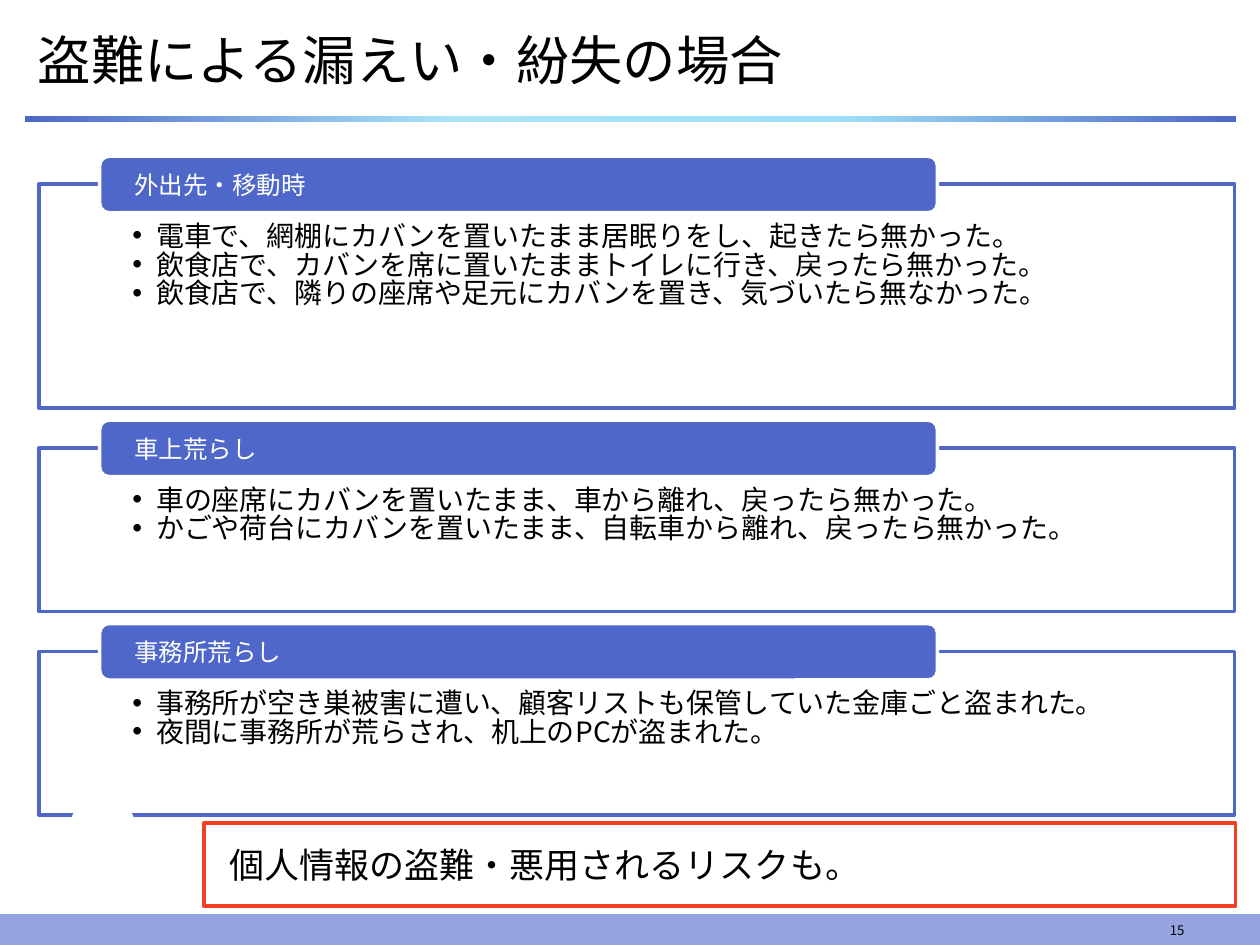
from dataclasses import dataclass

from lxml import etree
from pptx import Presentation
from pptx import util as u
from pptx.dml.color import RGBColor
from pptx.enum import shapes, text
from pptx.oxml import ns


@dataclass(frozen=True)
class Theme:
    font: str = "Noto Sans CJK JP"
    ink: str = "000000"
    paper: str = "FFFFFF"
    blue: str = "4E67C8"
    footer: str = "95A4DE"
    red: str = "F14124"
    bar_stops: tuple = ((0, "4E67C8"), (35, "A9E3F8"), (67, "9EE0F7"), (100, "4E67C8"))
    title_size: float = 30.5
    warning_size: float = 20
    list_size: float = 16
    tag_size: float = 14
    number_size: float = 7.5


def add_xml(parent, tag, **attributes):
    return etree.SubElement(parent, ns.qn(tag), attributes)


class SlideBuilder:
    def __init__(self, deck, theme):
        self.theme = theme
        self.slide = deck.slides.add_slide(deck.slide_layouts[5])

    def shape(self, kind, place, fill, line=None, width=2):
        """Add a preset shape; place is left, top, width, height in cm."""
        shape = self.slide.shapes.add_shape(kind, *map(u.Cm, place))
        shape.shadow.inherit = False
        shape.fill.solid()
        shape.fill.fore_color.rgb = RGBColor.from_string(fill)
        if line:
            shape.line.color.rgb = RGBColor.from_string(line)
            shape.line.width = u.Pt(width)
        else:
            shape.line.fill.background()
        return shape

    def rectangle(self, place, fill, line=None, width=2):
        return self.shape(shapes.MSO_SHAPE.RECTANGLE, place, fill, line, width)

    def gradient_bar(self, place):
        bar = self.rectangle(place, self.theme.blue)
        bar.fill.gradient()
        bar.fill.gradient_angle = 0
        stops = bar.element.spPr.find(ns.qn("a:gradFill")).find(ns.qn("a:gsLst"))
        for stop in list(stops):
            stops.remove(stop)
        for position, color in self.theme.bar_stops:
            stop = add_xml(stops, "a:gs", pos=str(position * 1000))
            add_xml(stop, "a:srgbClr", val=color)

    def add_text(self, box, lines, size, color, insets=(0.25, 0.13),
                 anchor=text.MSO_ANCHOR.MIDDLE, align=text.PP_ALIGN.LEFT):
        """Fill a box with one paragraph per line; insets are side and top/bottom in cm."""
        frame = box.text_frame
        frame.word_wrap = True
        frame.auto_size = text.MSO_AUTO_SIZE.NONE
        frame.vertical_anchor = anchor
        frame.margin_left = frame.margin_right = u.Cm(insets[0])
        frame.margin_top = frame.margin_bottom = u.Cm(insets[1])
        for index, line in enumerate(lines):
            para = frame.add_paragraph() if index else frame.paragraphs[0]
            para.alignment = align
            span = para.add_run()
            span.text = line
            span.font.name = self.theme.font
            span.font.size = u.Pt(size)
            span.font.color.rgb = RGBColor.from_string(color)
            add_xml(span._r.get_or_add_rPr(), "a:ea", typeface=self.theme.font)
        return frame.paragraphs

    def title(self, place, line):
        box = self.slide.shapes.title
        box.left, box.top, box.width, box.height = map(u.Cm, place)
        self.add_text(box, [line], self.theme.title_size, self.theme.ink)

    def number(self, place, line):
        box = self.slide.shapes.add_textbox(*map(u.Cm, place))
        self.add_text(box, [line], self.theme.number_size, self.theme.ink,
                      anchor=text.MSO_ANCHOR.BOTTOM, align=text.PP_ALIGN.RIGHT)

    def panel(self, top, height, heading, items):
        """Add a framed bullet list with its heading tag across the top edge."""
        theme = self.theme
        frame = self.rectangle((0.79, top, 24.1, height), theme.paper, theme.blue)
        paras = self.add_text(frame, items, theme.list_size, theme.ink,
                              insets=(1.88, 0.8), anchor=text.MSO_ANCHOR.TOP)
        for para in paras:
            para.line_spacing = 0.85
            settings = para._p.get_or_add_pPr()
            settings.set("marL", str(u.Cm(0.48)))
            settings.set("indent", str(u.Cm(-0.48)))
            add_xml(settings, "a:buFont", typeface="Arial")
            add_xml(settings, "a:buChar", char="•")
        tag = self.shape(shapes.MSO_SHAPE.ROUNDED_RECTANGLE, (2.01, top - 0.56, 16.89, 1.14),
                         theme.blue, theme.paper)
        self.add_text(tag, [heading], theme.tag_size, theme.paper, insets=(0.64, 0))

    def warning(self, place, line):
        box = self.rectangle(place, self.theme.paper, self.theme.red)
        self.add_text(box, [line], self.theme.warning_size, self.theme.ink, insets=(0.51, 0.13))


PANELS = [
    (4.52, "外出先・移動時", [
        "電車で、網棚にカバンを置いたまま居眠りをし、起きたら無かった。",
        "飲食店で、カバンを席に置いたままトイレに行き、戻ったら無かった。",
        "飲食店で、隣りの座席や足元にカバンを置き、気づいたら無なかった。",
    ]),
    (3.3, "車上荒らし", [
        "車の座席にカバンを置いたまま、車から離れ、戻ったら無かった。",
        "かごや荷台にカバンを置いたまま、自転車から離れ、戻ったら無かった。",
    ]),
    (3.3, "事務所荒らし", [
        "事務所が空き巣被害に遭い、顧客リストも保管していた金庫ごと盗まれた。",
        "夜間に事務所が荒らされ、机上のPCが盗まれた。",
    ]),
]
PANEL_GAP = 0.8


def main():
    theme = Theme()
    deck = Presentation()
    deck.slide_width, deck.slide_height = u.Cm(25.4), u.Cm(19.05)
    page = SlideBuilder(deck, theme)

    page.rectangle((0, 18.44, 25.4, 0.61), theme.footer, theme.footer, 0.75)
    page.gradient_bar((0.51, 2.34, 24.41, 0.13))
    page.title((0.51, 0.36, 24.41, 1.65), "盗難による漏えい・紛失の場合")

    top = 3.71
    for height, heading, items in PANELS:
        page.panel(top, height, heading, items)
        top += height + PANEL_GAP

    page.number((18.21, 18.44, 5.92, 0.61), "15")
    page.warning((4.11, 16.59, 20.8, 1.68), "個人情報の盗難・悪用されるリスクも。")
    page.shape(shapes.MSO_SHAPE.OVAL, (1.42, 16.05, 1.3, 1.19), theme.paper)

    deck.save("out.pptx")


if __name__ == "__main__":
    main()
